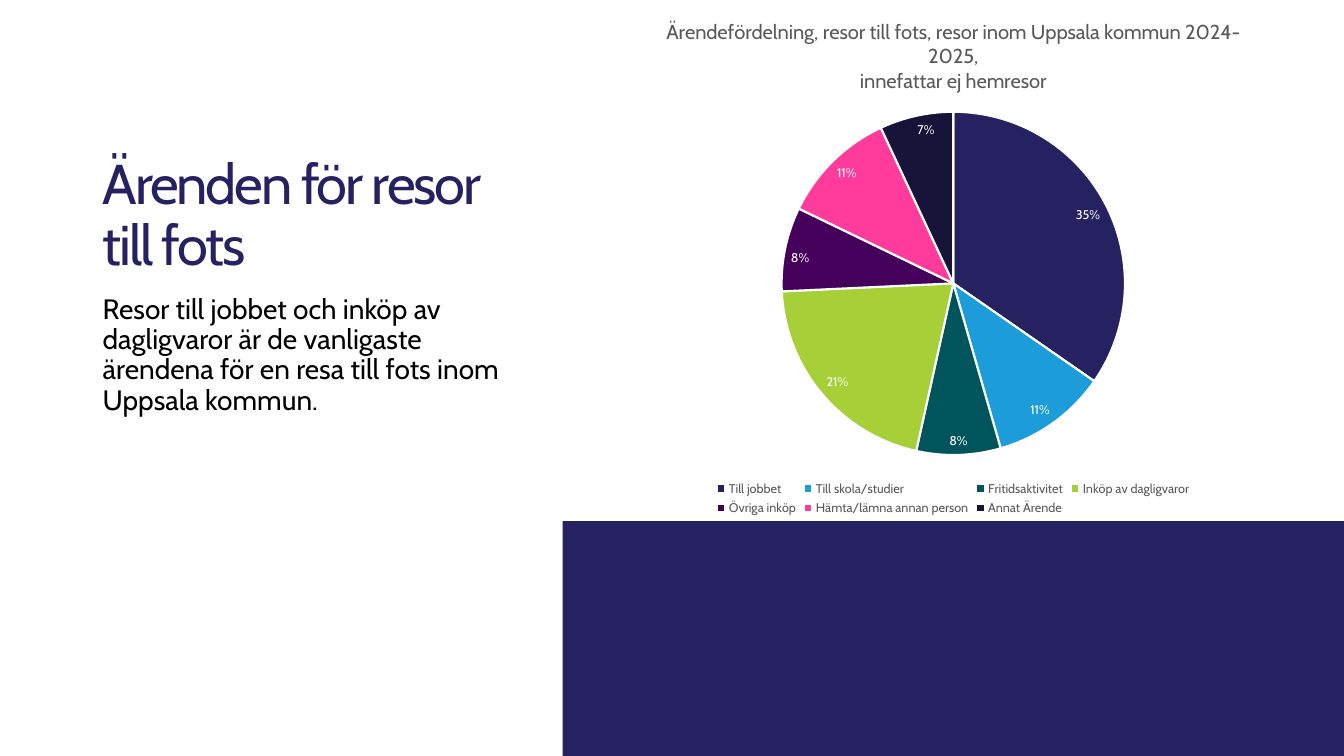
from lxml import etree
from pptx import Presentation
from pptx.chart.data import CategoryChartData
from pptx.dml.color import RGBColor
from pptx.enum.chart import XL_CHART_TYPE, XL_LABEL_POSITION, XL_LEGEND_POSITION
from pptx.enum.shapes import MSO_SHAPE
from pptx.enum.text import MSO_ANCHOR, PP_ALIGN
from pptx.oxml.ns import qn
from pptx.util import Inches, Pt

PIE = XL_CHART_TYPE.PIE
INSIDE_END = XL_LABEL_POSITION.INSIDE_END
BOTTOM_LEGEND = XL_LEGEND_POSITION.BOTTOM
RECTANGLE = MSO_SHAPE.RECTANGLE
ANCHOR_TOP, ANCHOR_BOTTOM = MSO_ANCHOR.TOP, MSO_ANCHOR.BOTTOM
CENTER = PP_ALIGN.CENTER

FONT = "Cabin"
PANEL = RGBColor(0x26, 0x22, 0x62)
NAVY = RGBColor(0x26, 0x22, 0x61)
BLUE = RGBColor(0x1C, 0x9C, 0xD9)
TEAL = RGBColor(0x00, 0x55, 0x5C)
LIME = RGBColor(0xA6, 0xCF, 0x38)
PURPLE = RGBColor(0x45, 0x00, 0x5C)
PINK = RGBColor(0xFF, 0x3C, 0x9C)
MIDNIGHT = RGBColor(0x17, 0x14, 0x3A)
GRAY = RGBColor(0x59, 0x59, 0x59)
BLACK = RGBColor(0, 0, 0)
WHITE = RGBColor(0xFF, 0xFF, 0xFF)

# Category, share, slice colour
ERRANDS = [
    ("Till jobbet", 0.35, NAVY),
    ("Till skola/studier", 0.11, BLUE),
    ("Fritidsaktivitet", 0.08, TEAL),
    ("Inköp av dagligvaror", 0.21, LIME),
    ("Övriga inköp", 0.08, PURPLE),
    ("Hämta/lämna annan person", 0.11, PINK),
    ("Annat Ärende", 0.07, MIDNIGHT),
]


def style_font(font, size, color):
    font.name = FONT
    font.size = Pt(size)
    font.bold = False
    font.color.rgb = color


def add_text(top, height, text, size, color, anchor):
    box = slide.shapes.add_textbox(Inches(0.92), Inches(top), Inches(4.19), Inches(height))
    frame = box.text_frame
    frame.word_wrap = True
    frame.vertical_anchor = anchor
    paragraph = frame.paragraphs[0]
    paragraph.line_spacing = 0.9
    run = paragraph.add_run()
    run.text = text
    style_font(run.font, size, color)
    return run


presentation = Presentation()
presentation.slide_width = Inches(13.33)
presentation.slide_height = Inches(7.5)
slide = presentation.slides.add_slide(presentation.slide_layouts[6])

# Panel below the chart
panel = slide.shapes.add_shape(RECTANGLE, Inches(5.58), Inches(5.17), Inches(7.75), Inches(2.33))
panel.shadow.inherit = False
panel.fill.solid()
panel.fill.fore_color.rgb = PANEL
panel.line.fill.background()

# Heading with tightened letters, and body text
heading = add_text(1.23, 1.57, "Ärenden för resor till fots", 40, NAVY, ANCHOR_BOTTOM)
heading.font._element.set("spc", "-150")
add_text(
    2.88, 3.87,
    "Resor till jobbet och inköp av dagligvaror är de vanligaste "
    "ärendena för en resa till fots inom Uppsala kommun.",
    20, BLACK, ANCHOR_TOP,
)

# Pie chart
chart_data = CategoryChartData(number_format="0%")
chart_data.categories = [name for name, share, color in ERRANDS]
chart_data.add_series("Series 1", [share for name, share, color in ERRANDS])
chart = slide.shapes.add_chart(
    PIE, Inches(5.58), Inches(0), Inches(7.75), Inches(5.16), chart_data
).chart
style_font(chart.font, 10, BLACK)

# Chart title
chart.has_title = True
title_frame = chart.chart_title.text_frame
title_lines = [
    "Ärendefördelning, resor till fots, resor inom Uppsala kommun 2024-2025,",
    "innefattar ej hemresor",
]
for index, line in enumerate(title_lines):
    paragraph = title_frame.add_paragraph() if index else title_frame.paragraphs[0]
    paragraph.alignment = CENTER
    run = paragraph.add_run()
    run.text = line
    style_font(run.font, 14.4, GRAY)
chart.chart_title.include_in_layout = False

# Legend
chart.has_legend = True
chart.legend.position = BOTTOM_LEGEND
chart.legend.include_in_layout = False
style_font(chart.legend.font, 9, GRAY)

# Slices and their labels
plot = chart.plots[0]
plot.vary_by_categories = True
for index, (name, share, color) in enumerate(ERRANDS):
    slice_format = plot.series[0].points[index].format
    slice_format.fill.solid()
    slice_format.fill.fore_color.rgb = color
    slice_format.line.color.rgb = WHITE
    slice_format.line.width = Pt(1.5)
plot.has_data_labels = True
labels = plot.data_labels
labels.show_value = True
labels.show_percentage = False
labels.number_format = "0%"
labels.number_format_is_linked = False
labels.position = INSIDE_END
style_font(labels.font, 9, WHITE)

# Fixed place of the pie inside the chart
plot_area = chart._chartSpace.chart.plotArea
for old_layout in plot_area.findall(qn("c:layout")):
    plot_area.remove(old_layout)
layout = etree.Element(qn("c:layout"))
plot_area.insert(0, layout)
manual_layout = etree.SubElement(layout, qn("c:manualLayout"))
for tag, value in [
    ("layoutTarget", "inner"), ("xMode", "edge"), ("yMode", "edge"),
    ("x", "0.28"), ("y", "0.215"), ("w", "0.44"), ("h", "0.66"),
]:
    etree.SubElement(manual_layout, qn("c:" + tag)).set("val", value)

presentation.save("out.pptx")
